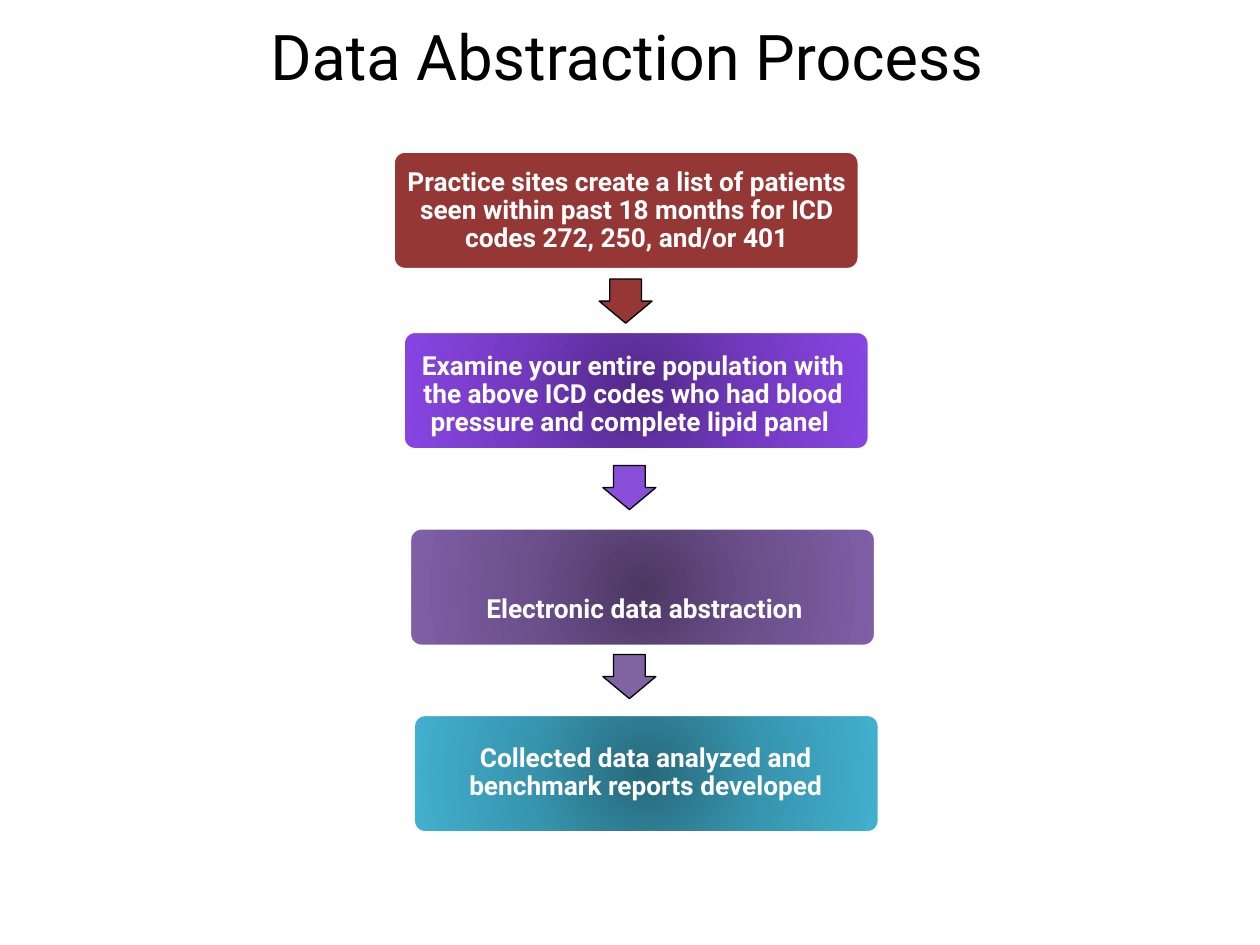
from lxml.etree import SubElement
from pptx import Presentation
from pptx.dml.color import RGBColor
from pptx.enum.shapes import MSO_SHAPE
from pptx.enum.text import MSO_ANCHOR, PP_ALIGN
from pptx.oxml.ns import qn
from pptx.util import Pt

PX = 9144
FONT = "Roboto"
COLORS = {
    "black": "000000",
    "white": "FFFFFF",
    "red": "953735",
    "violet": "8A4FD9",
    "mauve": "8064A2",
}
GRADIENTS = {
    "violet": ("512987", "733AC0", "8845E3"),
    "mauve": ("4C3863", "6C508C", "805FA7"),
    "teal": ("27697B", "3795AF", "42B1CF"),
}
STEPS = [
    ("red", (312, 120), (315, 123, 365, 89),
     "Practice sites create a list of patients seen within past 18 months "
     "for ICD codes 272, 250, and/or 401"),
    ("violet", (320, 263), (323, 257, 359, 113),
     "Examine your entire population with the above ICD codes who had blood "
     "pressure and complete lipid panel "),
    ("mauve", (325, 419), (329, 440, 365, 89), "Electronic data abstraction"),
    ("teal", (328, 567), (330, 569, 365, 89),
     "Collected data analyzed and benchmark reports developed"),
]
ARROWS = [("red", 479, 218), ("violet", 482, 366), ("mauve", 482, 516)]


def px(*values):
    """Turn px lengths into EMU."""
    return [v * PX for v in values]


def rgb(name):
    """Return a palette colour."""
    return RGBColor.from_string(COLORS[name])


def set_text(tf, text, size, color, bold=False):
    """Write one centred paragraph in the middle of a frame."""
    tf.text = text
    tf.word_wrap = True
    tf.vertical_anchor = MSO_ANCHOR.MIDDLE
    p = tf.paragraphs[0]
    p.alignment = PP_ALIGN.CENTER
    font = p.runs[0].font
    font.name, font.size, font.bold = FONT, Pt(size), bold
    font.color.rgb = rgb(color)
    return p


def fill_radial(sp, stops):
    """Fill a shape with an even gradient running out from its centre."""
    grad = SubElement(sp._element.spPr, qn("a:gradFill"), rotWithShape="1")
    gs_lst = SubElement(grad, qn("a:gsLst"))
    for i, color in enumerate(stops):
        gs = SubElement(gs_lst, qn("a:gs"), pos=str(i * 50000))
        SubElement(gs, qn("a:srgbClr"), val=color)
    circle = SubElement(grad, qn("a:path"), path="circle")
    SubElement(circle, qn("a:fillToRect"), l="50000", t="50000", r="50000", b="50000")


def set_line(sp, color, width):
    """Outline a shape and drop its shadow."""
    sp.line.color.rgb = rgb(color)
    sp.line.width = Pt(width)
    sp.shadow.inherit = False


def add_title(s, text):
    """Place and format the title placeholder."""
    sp = s.shapes.title
    sp.left, sp.top, sp.width, sp.height = px(14, 2, 967, 83)
    set_text(sp.text_frame, text, 36, "black")


def add_step(s, color, corner, text_box, text):
    """Add a grouped rounded box and its label."""
    grp = s.shapes.add_group_shape()
    sp = grp.shapes.add_shape(MSO_SHAPE.ROUNDED_RECTANGLE, *px(*corner, 370, 94))
    sp.adjustments[0] = 0.1
    if color in GRADIENTS:
        fill_radial(sp, GRADIENTS[color])
    else:
        sp.fill.solid()
        sp.fill.fore_color.rgb = rgb(color)
    set_line(sp, "white", 2)
    tf = grp.shapes.add_textbox(*px(*text_box)).text_frame
    tf.margin_left = tf.margin_top = tf.margin_right = tf.margin_bottom = 6 * PX
    set_text(tf, text, 15, "white", True).line_spacing = 0.9


def add_arrow(s, color, left, top):
    """Add a block arrow pointing down."""
    sp = s.shapes.add_shape(MSO_SHAPE.RIGHT_ARROW, *px(left, top, 35, 42))
    sp.rotation = 90
    sp.adjustments[0], sp.adjustments[1] = 0.6, 0.5
    sp.fill.solid()
    sp.fill.fore_color.rgb = rgb(color)
    set_line(sp, "black", 0.75)


def main():
    """Build the slide."""
    prs = Presentation()
    prs.slide_width, prs.slide_height = px(1000, 750)
    s = prs.slides.add_slide(prs.slide_layouts[5])
    add_title(s, "Data Abstraction Process")
    for step in STEPS:
        add_step(s, *step)
    for arrow in ARROWS:
        add_arrow(s, *arrow)
    prs.save("out.pptx")


if __name__ == "__main__":
    main()
